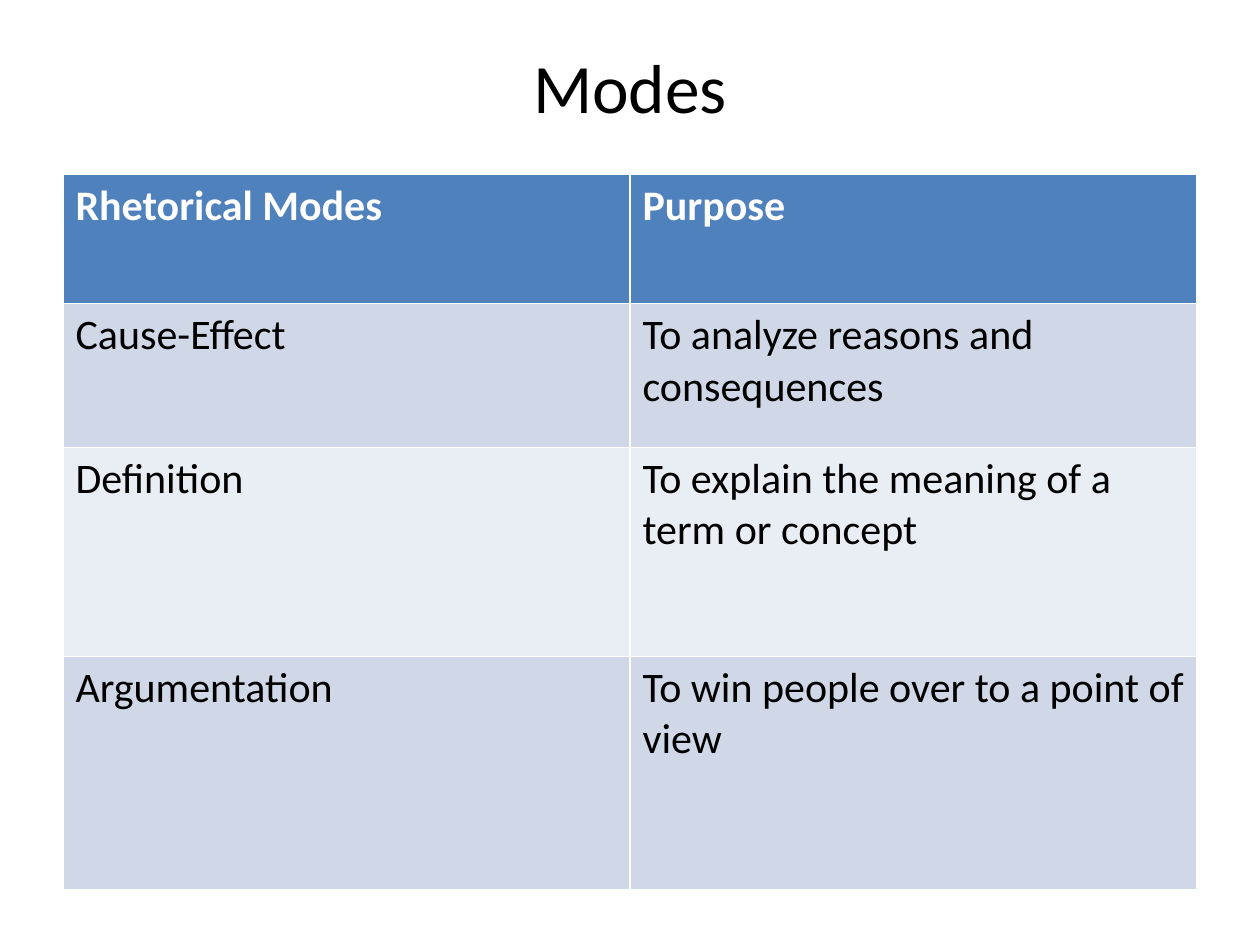
"""Build the slide on rhetorical modes."""
import dataclasses

import pptx
import pptx.dml.color
import pptx.enum.text
import pptx.util

Inches = pptx.util.Inches
Align = pptx.enum.text.PP_ALIGN


@dataclasses.dataclass(frozen=True)
class Theme:
    """Colours, font and type sizes."""
    font: str = "Calibri"
    dark: str = "000000"
    light: str = "FFFFFF"
    head: str = "4F81BD"
    bands: tuple = ("D0D8E8", "E9EDF4")
    title: float = 39.6
    body: float = 24


THEME = Theme()
ROWS = [
    ("Rhetorical Modes", "Purpose"),
    ("Cause-Effect", "To analyze reasons and consequences"),
    ("Definition", "To explain the meaning of a term or concept"),
    ("Argumentation", "To win people over to a point of view"),
]
HEIGHTS = (1.03, 1.14, 1.66, 1.85)


def color(code):
    """Turn a hex code into a colour."""
    return pptx.dml.color.RGBColor.from_string(code)


def write(frame, text, size=THEME.body, ink=THEME.dark, bold=False,
          align=Align.LEFT):
    """Put formatted text into a text frame."""
    para = frame.paragraphs[0]
    para.alignment = align
    run = para.add_run()
    run.text = text
    run.font.name = THEME.font
    run.font.size = pptx.util.Pt(size)
    run.font.bold = bold
    run.font.color.rgb = color(ink)


def add_title(slide, box, text):
    """Place the title in its box."""
    title = slide.shapes.title
    title.left, title.top, title.width, title.height = map(Inches, box)
    frame = title.text_frame
    frame.auto_size = pptx.enum.text.MSO_AUTO_SIZE.NONE
    frame.vertical_anchor = pptx.enum.text.MSO_ANCHOR.MIDDLE
    write(frame, text, size=THEME.title, align=Align.CENTER)


def add_modes(slide, box, rows, heights):
    """Place the table of modes in its box."""
    count = len(rows[0])
    table = slide.shapes.add_table(len(rows), count, *map(Inches, box)).table
    for col in table.columns:
        col.width = Inches(box[2] / count)
    for i, (texts, height) in enumerate(zip(rows, heights)):
        head = i == 0
        table.rows[i].height = Inches(height)
        fill = THEME.head if head else THEME.bands[(i - 1) % 2]
        for cell, text in zip(table.rows[i].cells, texts):
            cell.fill.solid()
            cell.fill.fore_color.rgb = color(fill)
            write(cell.text_frame, text, bold=head,
                  ink=THEME.light if head else THEME.dark)


def main():
    """Build and save the slide."""
    deck = pptx.Presentation()
    deck.slide_width, deck.slide_height = Inches(10), Inches(7.5)
    slide = deck.slides.add_slide(deck.slide_layouts.get_by_name("Title Only"))
    add_title(slide, (0.5, 0.3, 9, 0.76), "Modes")
    add_modes(slide, (0.5, 1.38, 9, sum(HEIGHTS)), ROWS, HEIGHTS)
    deck.save("out.pptx")


if __name__ == "__main__":
    main()
